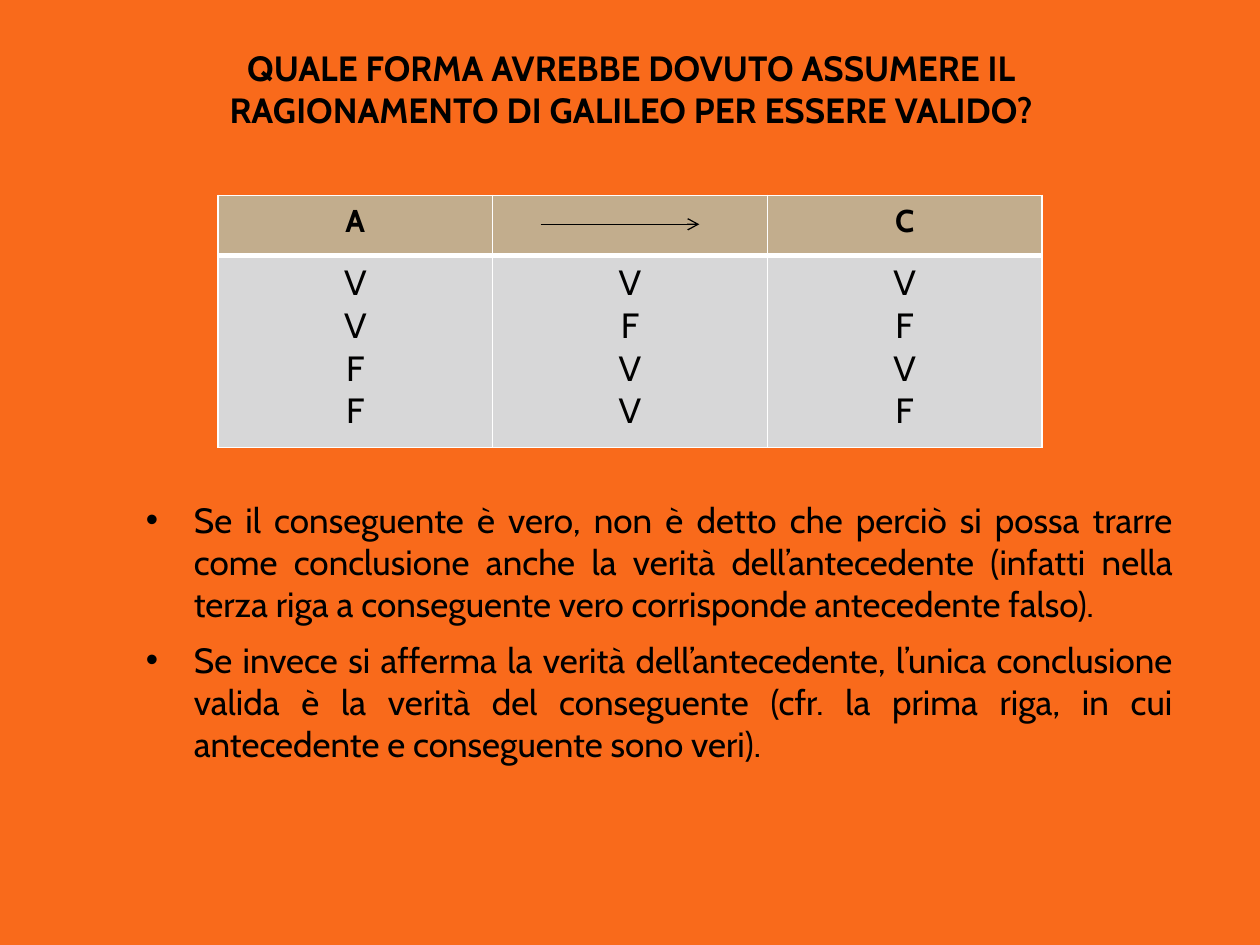
from dataclasses import dataclass

from lxml.etree import SubElement
from pptx import Presentation
from pptx.dml.color import RGBColor
from pptx.enum.shapes import MSO_CONNECTOR
from pptx.enum.text import MSO_ANCHOR, PP_ALIGN
from pptx.oxml.ns import qn
from pptx.util import Inches, Pt

TITLE = ("QUALE FORMA AVREBBE DOVUTO ASSUMERE IL "
         "RAGIONAMENTO DI GALILEO PER ESSERE VALIDO?")
HEADINGS = ["A", "", "C"]
TRUTH_COLUMNS = ["VVFF", "VFVV", "VFVF"]
REMARKS = [
    "Se il conseguente è vero, non è detto che perciò si possa trarre come "
    "conclusione anche la verità dell’antecedente (infatti nella terza riga "
    "a conseguente vero corrisponde antecedente falso).",
    "Se invece si afferma la verità dell’antecedente, l’unica conclusione "
    "valida è la verità del conseguente (cfr. la prima riga, in cui "
    "antecedente e conseguente sono veri).",
]


@dataclass(frozen=True)
class Theme:
    font: str = "Cabin"
    ink: str = "000000"
    backdrop: str = "F96A1B"
    heading_fill: str = "C2AD8D"
    body_fill: str = "D7D7D8"
    rule: str = "FFFFFF"
    text_size: int = 20
    heading_size: int = 18
    thin: float = 1
    thick: float = 3
    arrow: float = 0.75


THEME = Theme()
WIDTH, HEIGHT = 10, 7.5
COLUMN = 2.18
ROWS = [0.48, 1.52]
TABLE_LEFT = (WIDTH - COLUMN * len(HEADINGS)) / 2
TABLE_TOP = 1.55
HANG = 0.38


def paint(fill, color):
    fill.solid()
    fill.fore_color.rgb = RGBColor.from_string(color)


def write(frame, paragraphs, size=THEME.text_size, bold=False,
          align=PP_ALIGN.CENTER, before=0, bullet=None):
    frame.word_wrap = True
    for index, words in enumerate(paragraphs):
        paragraph = frame.add_paragraph() if index else frame.paragraphs[0]
        paragraph.alignment = align
        paragraph.space_before = Pt(before)
        if bullet:
            props = paragraph._p.get_or_add_pPr()
            props.set("marL", str(Inches(HANG)))
            props.set("indent", str(-Inches(HANG)))
            SubElement(props, qn("a:buFont"), typeface="Arial")
            SubElement(props, qn("a:buChar"), char=bullet)
        paragraph.font.size = Pt(size)
        if words:
            run = paragraph.add_run()
            run.text = words
            run.font.name = THEME.font
            run.font.size = Pt(size)
            run.font.bold = bold
            run.font.color.rgb = RGBColor.from_string(THEME.ink)


def add_text(slide, box, paragraphs, anchor=MSO_ANCHOR.TOP, **style):
    frame = slide.shapes.add_textbox(*map(Inches, box)).text_frame
    frame.vertical_anchor = anchor
    write(frame, paragraphs, **style)


def rule_cell(cell, top, bottom):
    props = cell._tc.get_or_add_tcPr()
    widths = {"L": THEME.thin, "R": THEME.thin, "T": top, "B": bottom}
    for side, points in widths.items():
        edge = SubElement(props, qn(f"a:ln{side}"), w=str(Pt(points)))
        SubElement(SubElement(edge, qn("a:solidFill")), qn("a:srgbClr"), val=THEME.rule)


def fill_cell(cell, paragraphs, color, top, bottom, **style):
    cell.margin_left = cell.margin_right = Inches(0.04)
    cell.margin_top = cell.margin_bottom = Inches(0.05)
    rule_cell(cell, top, bottom)
    paint(cell.fill, color)
    write(cell.text_frame, paragraphs, **style)


def add_truth_table(slide):
    table = slide.shapes.add_table(
        len(ROWS), len(HEADINGS), Inches(TABLE_LEFT), Inches(TABLE_TOP),
        Inches(COLUMN * len(HEADINGS)), Inches(sum(ROWS))).table
    table.horz_banding = False
    for row, height in zip(table.rows, ROWS):
        row.height = Inches(height)
    for index, (heading, values) in enumerate(zip(HEADINGS, TRUTH_COLUMNS)):
        table.columns[index].width = Inches(COLUMN)
        fill_cell(table.cell(0, index), [heading], THEME.heading_fill,
                  THEME.thin, THEME.thick, size=THEME.heading_size, bold=True)
        fill_cell(table.cell(1, index), values, THEME.body_fill,
                  THEME.thick, THEME.thin)


def add_implication(slide):
    start = TABLE_LEFT + COLUMN + 0.38
    level = TABLE_TOP + ROWS[0] / 2 - 0.01
    arrow = slide.shapes.add_connector(
        MSO_CONNECTOR.STRAIGHT, Inches(start), Inches(level),
        Inches(start + 1.26), Inches(level))
    arrow.line.width = Pt(THEME.arrow)
    arrow.line.color.rgb = RGBColor.from_string(THEME.ink)
    SubElement(arrow.line._get_or_add_ln(), qn("a:tailEnd"), type="arrow")
    SubElement(arrow._element.spPr, qn("a:effectLst"))


def main():
    deck = Presentation()
    deck.slide_width, deck.slide_height = Inches(WIDTH), Inches(HEIGHT)
    slide = deck.slides.add_slide(deck.slide_layouts[6])
    paint(slide.background.fill, THEME.backdrop)
    add_truth_table(slide)
    add_text(slide, (1.06, 3.91, 8.35, 3.39), REMARKS,
             align=PP_ALIGN.JUSTIFY, before=8, bullet="•")
    add_text(slide, (0.9, 0.4, 8.22, 0.6), [TITLE],
             anchor=MSO_ANCHOR.MIDDLE, bold=True)
    add_implication(slide)
    deck.save("out.pptx")


if __name__ == "__main__":
    main()
